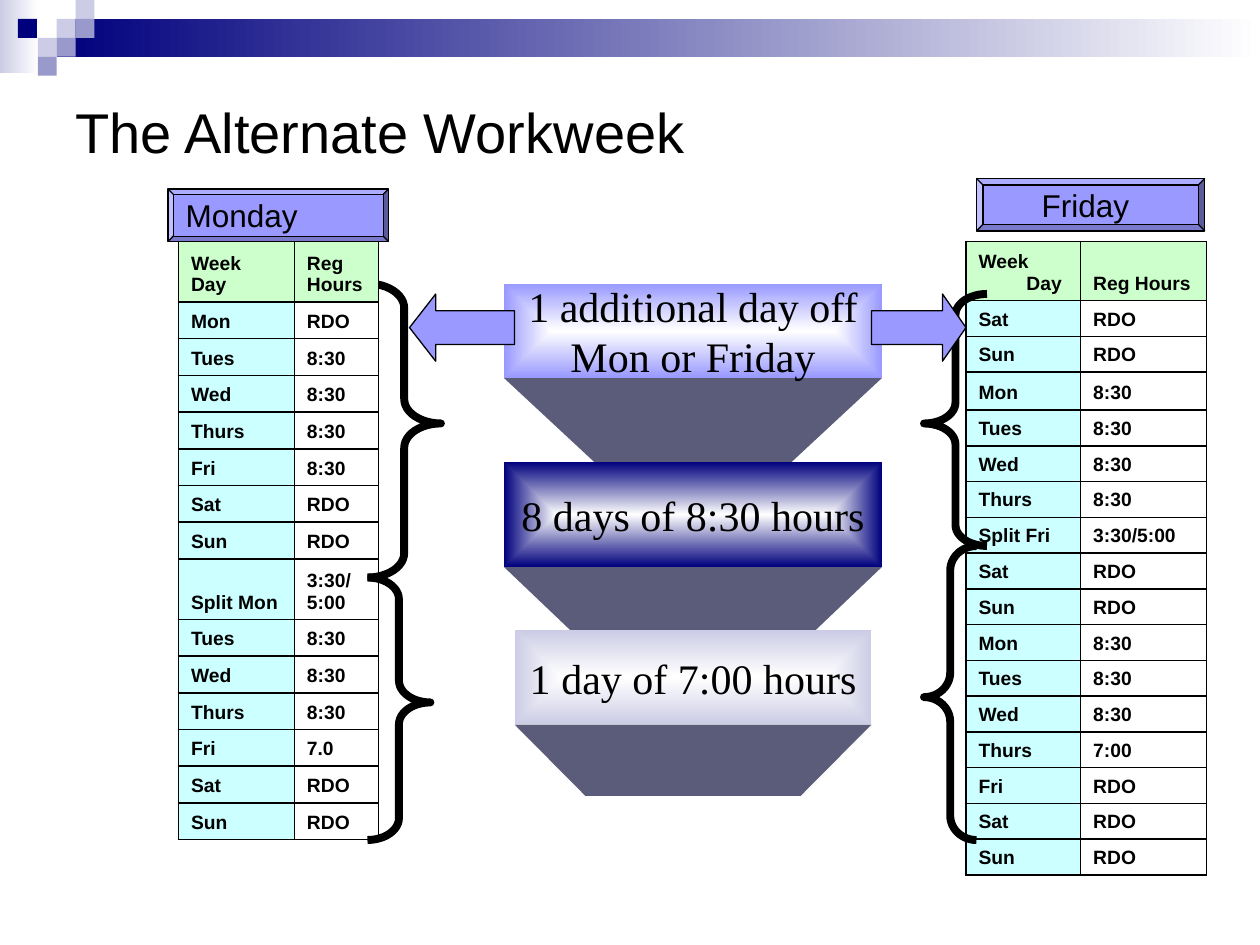
from lxml import etree
from pptx import Presentation
from pptx.dml.color import RGBColor
from pptx.enum.shapes import MSO_SHAPE
from pptx.enum.text import MSO_ANCHOR, PP_ALIGN
from pptx.oxml import parse_xml
from pptx.oxml.ns import nsdecls, qn
from pptx.util import Inches, Pt

RECTANGLE, BEVEL = MSO_SHAPE.RECTANGLE, MSO_SHAPE.BEVEL
LEFT_ARROW = MSO_SHAPE.LEFT_ARROW
LEFT_BRACE, RIGHT_BRACE = MSO_SHAPE.LEFT_BRACE, MSO_SHAPE.RIGHT_BRACE
MIDDLE, BOTTOM = MSO_ANCHOR.MIDDLE, MSO_ANCHOR.BOTTOM
LEFT, CENTER = PP_ALIGN.LEFT, PP_ALIGN.CENTER

WIDTH, HEIGHT = 10, 7.5
GRID = 1 / 12       # the slide is 120 columns by 90 rows
SQUARE = 0.15       # side of one square in the header ornament
BLACK, WHITE, NAVY = "000000", "FFFFFF", "00007D"
PERIWINKLE, LAVENDER, LILAC = "9999FF", "CCCCE6", "9999CC"
SHADE, GREEN, CYAN = "5B5B7A", "CCFFCC", "CCFFFF"


def color(value):
    return RGBColor.from_string(value)


def write(frame, text, size=18, font="Arial", bold=False, align=LEFT, anchor=MIDDLE,
          wrap=True, hanging=0):
    """Fill a text frame, one paragraph for each line."""
    frame.word_wrap = wrap
    frame.vertical_anchor = anchor
    for index, line in enumerate(text.split("\n")):
        paragraph = frame.add_paragraph() if index else frame.paragraphs[0]
        paragraph.alignment = align
        if hanging:
            properties = paragraph._p.get_or_add_pPr()
            properties.set("marL", str(Inches(hanging)))
            properties.set("indent", str(-Inches(hanging)))
        run = paragraph.add_run()
        run.text = line
        run.font.size, run.font.name, run.font.bold = Pt(size), font, bold
        run.font.color.rgb = color(BLACK)


class SlideBuilder:
    """Places elements on the current slide, measured in grid units."""

    def __init__(self, slide, unit=GRID):
        self.slide = slide
        self.unit = unit

    def lengths(self, *values):
        return [Inches(value * self.unit) for value in values]

    def style(self, shape, fill=None, line=0):
        shape.shadow.inherit = False
        if fill:
            shape.fill.solid()
            shape.fill.fore_color.rgb = color(fill)
        else:
            shape.fill.background()
        if line:
            shape.line.color.rgb = color(BLACK)
            shape.line.width = Pt(line)
        else:
            shape.line.fill.background()
        return shape

    def shape(self, kind, box, fill=None, line=0, adjustments=()):
        shape = self.slide.shapes.add_shape(kind, *self.lengths(*box))
        for index, value in enumerate(adjustments):
            shape.adjustments[index] = value
        return self.style(shape, fill, line)

    def gradient(self, box, start, end, from_center=False):
        shape = self.shape(RECTANGLE, box)
        shape.fill.gradient()
        shape.fill.gradient_angle = 0
        for stop, value, position in zip(shape.fill.gradient_stops, (start, end), (0, 1)):
            stop.color.rgb = color(value)
            stop.position = position
        if from_center:
            linear = shape._element.spPr.find(qn("a:gradFill")).find(qn("a:lin"))
            linear.getparent().replace(linear, parse_xml(
                f'<a:path {nsdecls("a")} path="shape">'
                '<a:fillToRect l="50000" t="50000" r="50000" b="50000"/></a:path>'))
        return shape

    def polygon(self, points, fill):
        points = [self.lengths(*point) for point in points]
        builder = self.slide.shapes.build_freeform(*points[0], scale=1.0)
        builder.add_line_segments(points[1:], close=True)
        return self.style(builder.convert_to_shape(), fill)

    def text(self, box, text, **style):
        frame = self.slide.shapes.add_textbox(*self.lengths(*box)).text_frame
        write(frame, text, **style)

    def borders(self, cell):
        properties = cell._tc.get_or_add_tcPr()
        for side in ("lnL", "lnR", "lnT", "lnB"):
            border = etree.SubElement(properties, qn(f"a:{side}"), w=str(Pt(1)))
            solid = etree.SubElement(border, qn("a:solidFill"))
            etree.SubElement(solid, qn("a:srgbClr"), val=BLACK)

    def schedule(self, box, columns, tall_rows, days, hanging=0):
        """Draw a table; rows without a height of their own share what is left."""
        rows = [("Week Day", "Reg Hours"), *days]
        table = self.slide.shapes.add_table(len(rows), 2, *self.lengths(*box)).table
        table.first_row = table.horz_banding = False
        for column, width in zip(table.columns, columns):
            column.width = Inches(width)
        height = (box[3] * self.unit - sum(tall_rows.values())) / (len(rows) - len(tall_rows))
        for r, values in enumerate(rows):
            table.rows[r].height = Inches(tall_rows.get(r, height))
            for c, value in enumerate(values):
                cell = table.cell(r, c)
                self.borders(cell)
                if r and c:
                    cell.fill.background()
                else:
                    cell.fill.solid()
                    cell.fill.fore_color.rgb = color(CYAN if r else GREEN)
                write(cell.text_frame, value, size=11, bold=True, hanging=hanging)
                cell.vertical_anchor = BOTTOM


def add_header(slide):
    ornament = SlideBuilder(slide, SQUARE)
    ornament.gradient((0, 0, 2.05, 3.85), LAVENDER, WHITE)
    ornament.gradient((3, 1, WIDTH / SQUARE - 3, 2), NAVY, WHITE)
    for column, row, fill in ((3, 1, LAVENDER), (4, 0, LAVENDER), (4, 1, LILAC),
                              (2, 2, LAVENDER), (0.95, 1, NAVY), (3, 2, LILAC),
                              (2, 3, LILAC)):
        ornament.shape(RECTANGLE, (column, row, 1, 1), fill)


def add_steps(builder):
    # Each box stands on a tapering side: box, edge colour, text, taper and depth
    steps = (
        ((48, 27, 36, 9), PERIWINKLE, "1 additional day off\nMon or Friday", 8.6, 8),
        ((48, 44, 36, 10), NAVY, "8 days of 8:30 hours", 6.3, 6),
        ((49, 60, 34, 9), LAVENDER, "1 day of 7:00 hours", 6.75, 6.8),
    )
    for (left, top, width, height), edge, text, taper, depth in steps:
        right, base = left + width, top + height
        builder.polygon(((left, base), (right, base), (right - taper, base + depth),
                         (left + taper, base + depth)), SHADE)
        box = builder.gradient((left, top, width, height), WHITE, edge, from_center=True)
        write(box.text_frame, text, size=24, font="Times New Roman", align=CENTER, wrap=False)


def add_label(builder, box, text, adjustment, **style):
    label = builder.shape(BEVEL, box, PERIWINKLE, 0.75, (adjustment,))
    write(label.text_frame, text, wrap=False, **style)
    return label


def day_rows(days, hours):
    return list(zip(days.split(), hours.split()))


def main():
    presentation = Presentation()
    presentation.slide_width, presentation.slide_height = Inches(WIDTH), Inches(HEIGHT)
    slide = presentation.slides.add_slide(presentation.slide_layouts[6])
    builder = SlideBuilder(slide)

    add_header(slide)
    builder.text((6, 6, 108, 13), "The Alternate Workweek", size=32)
    builder.shape(RIGHT_BRACE, (35, 27, 7, 28), None, 4.5, (0.333, 0.476))
    add_steps(builder)

    # Schedules and the arrows that point to them
    friday_rows = [
        *day_rows("Sat Sun Mon Tues Wed Thurs", "RDO RDO 8:30 8:30 8:30 8:30"),
        ("Split Fri", "3:30/5:00"),
        *day_rows("Sat Sun Mon Tues Wed Thurs Fri Sat Sun",
                  "RDO RDO 8:30 8:30 8:30 7:00 RDO RDO RDO"),
    ]
    builder.schedule((92, 23, 23, 60.2), (0.91, 1), {0: 0.47, 3: 0.3}, friday_rows, 0.38)
    builder.shape(LEFT_ARROW, (39, 28, 10, 6.4), PERIWINKLE, 0.75, (0.5, 0.39))
    monday_rows = [
        *day_rows("Mon Tues Wed Thurs Fri Sat Sun", "RDO 8:30 8:30 8:30 8:30 RDO RDO"),
        ("Split Mon", "3:30/ 5:00"),
        *day_rows("Tues Wed Thurs Fri Sat Sun", "8:30 8:30 8:30 7.0 RDO RDO"),
    ]
    builder.schedule((17, 23, 19, 57), (0.92, 0.67), {0: 0.48, 8: 0.48}, monday_rows)

    # Labels above the schedules
    add_label(builder, (16, 18, 21, 5), "Monday", 0.1)
    friday = add_label(builder, (93, 17, 21.75, 5), "Friday", 0.125, align=CENTER)
    friday.text_frame.margin_right = Inches(0.18)

    # Braces that group the weeks
    builder.shape(RIGHT_BRACE, (35, 55, 6, 25), None, 4.5, (0.347, 0.476))
    builder.shape(LEFT_BRACE, (88, 28, 6, 24), None, 4.5, (0.333, 0.514))
    builder.shape(LEFT_BRACE, (88, 52, 5, 28), None, 4.5, (0.467, 0.514))
    right_arrow = builder.shape(LEFT_ARROW, (83, 28, 9, 6.4), PERIWINKLE, 0.75, (0.5, 0.35))
    right_arrow.rotation = 180

    presentation.save("out.pptx")


if __name__ == "__main__":
    main()
